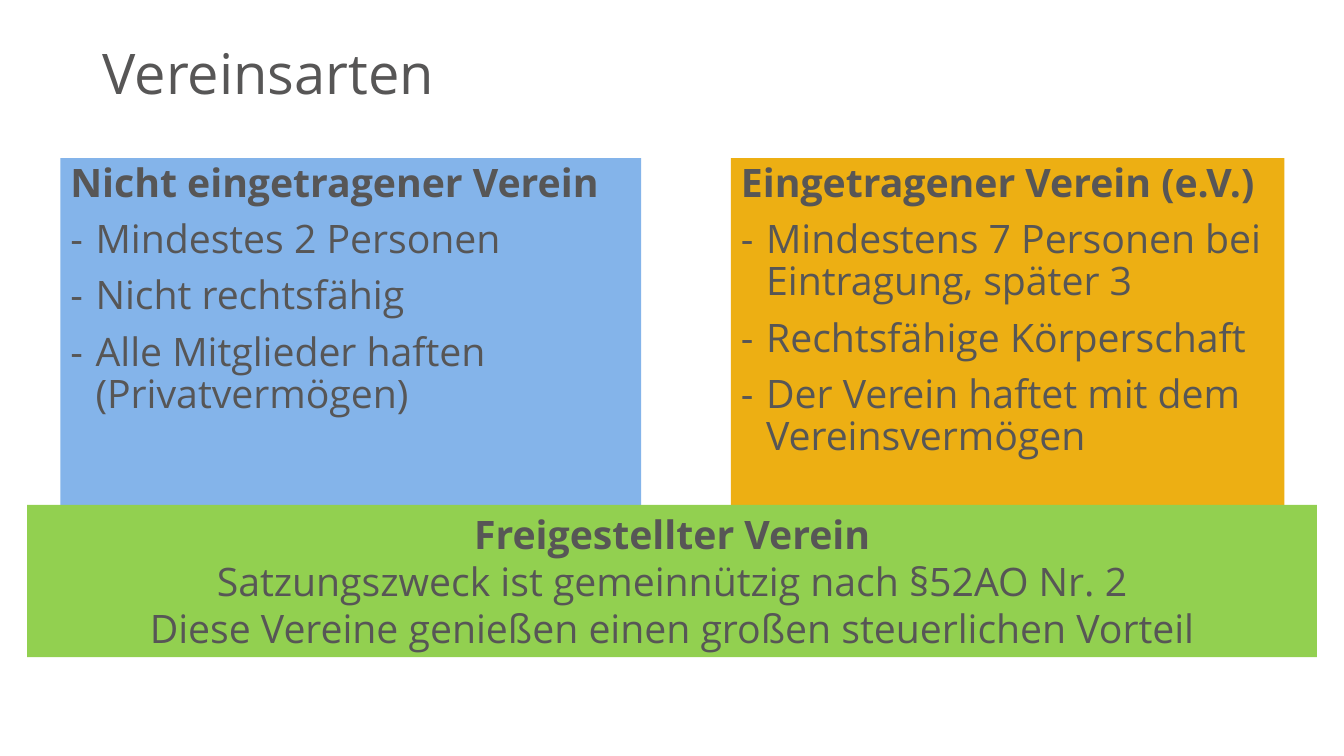
"""Build the slide on types of associations (Vereinsarten)."""
from lxml import etree
from pptx import Presentation
from pptx import util as u
from pptx.dml.color import RGBColor
from pptx.enum import shapes, text
from pptx.oxml.ns import qn

TITLE = ("Vereinsarten", (0.92, 0.4, 8.29, 0.72))
CARDS = [
    ("Nicht eingetragener Verein",
     ["Mindestes 2 Personen", "Nicht rechtsfähig",
      "Alle Mitglieder haften (Privatvermögen)"],
     "blue", 0.6, 5.76),
    ("Eingetragener Verein (e.V.)",
     ["Mindestens 7 Personen bei Eintragung, später 3",
      "Rechtsfähige Körperschaft",
      "Der Verein haftet mit dem Vereinsvermögen"],
     "orange", 7.25, 5.49),
]
CARD_TOP, CARD_HEIGHT = 1.57, 3.9
BANNER = ("Freigestellter Verein",
          ["Satzungszweck ist gemeinnützig nach §52AO Nr. 2",
           "Diese Vereine genießen einen großen steuerlichen Vorteil"],
          "green", (0.27, 5.01, 12.79, 1.51))
THEME = {"font": "Open Sans", "title": 40, "body": 28, "text": "575656",
         "blue": "84B4EA", "orange": "EDAF13", "green": "92D050"}


def style(p, size, bold=False):
    for r in p.runs:
        r.font.name = THEME["font"]
        r.font.size = u.Pt(size)
        r.font.bold = bold
        r.font.color.rgb = RGBColor.from_string(THEME["text"])


def add_dash(p):
    pPr = p._p.get_or_add_pPr()
    pPr.set("marL", str(u.Inches(0.25)))
    pPr.set("indent", str(-u.Inches(0.25)))
    etree.SubElement(pPr, qn("a:buFont")).set("typeface", THEME["font"])
    etree.SubElement(pPr, qn("a:buChar")).set("char", "-")


def add_panel(s, heading, lines, color, box, bulleted):
    sp = s.shapes.add_shape(shapes.MSO_SHAPE.RECTANGLE, *map(u.Inches, box))
    sp.shadow.inherit = False
    sp.fill.solid()
    sp.fill.fore_color.rgb = RGBColor.from_string(THEME[color])
    sp.line.fill.background()
    tf = sp.text_frame
    tf.word_wrap = True
    tf.vertical_anchor = text.MSO_ANCHOR.TOP
    tf.text = "\n".join([heading, *lines])
    for i, p in enumerate(tf.paragraphs):
        p.alignment = text.PP_ALIGN.LEFT if bulleted else text.PP_ALIGN.CENTER
        if bulleted:
            p.line_spacing = 0.9
            if i:
                p.space_before = u.Pt(10)
                add_dash(p)
        style(p, THEME["body"], bold=i == 0)


def main():
    prs = Presentation()
    prs.slide_width, prs.slide_height = u.Inches(13.33), u.Inches(7.5)
    s = prs.slides.add_slide(prs.slide_layouts[6])

    title, box = TITLE
    tf = s.shapes.add_textbox(*map(u.Inches, box)).text_frame
    tf.word_wrap = True
    tf.vertical_anchor = text.MSO_ANCHOR.MIDDLE
    tf.text = title
    tf.paragraphs[0].line_spacing = 0.9
    style(tf.paragraphs[0], THEME["title"])

    for heading, lines, color, left, width in CARDS:
        add_panel(s, heading, lines, color,
                  (left, CARD_TOP, width, CARD_HEIGHT), bulleted=True)
    add_panel(s, *BANNER, bulleted=False)
    prs.save("out.pptx")


if __name__ == "__main__":
    main()
